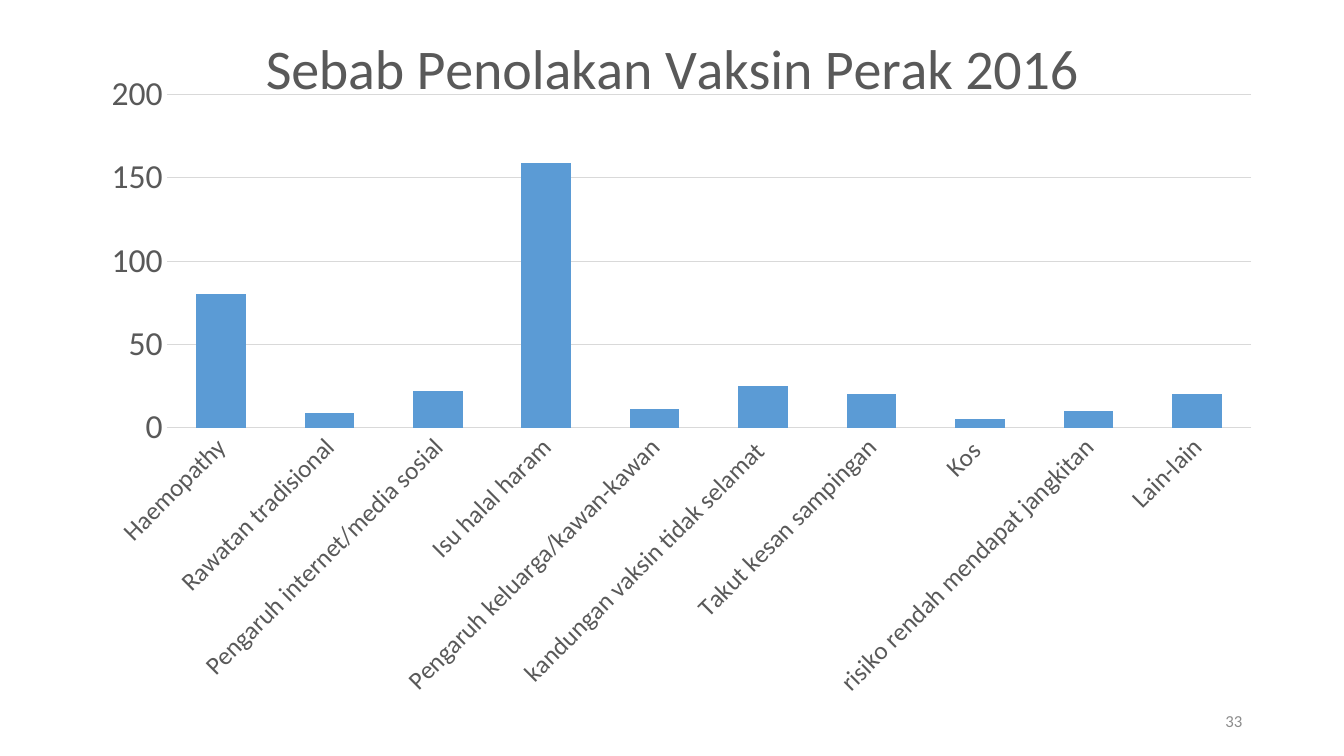
from lxml.etree import SubElement
from pptx import Presentation
from pptx.chart.data import CategoryChartData as ChartData
from pptx.dml.color import RGBColor
from pptx.enum.chart import XL_CHART_TYPE as ChartType, XL_TICK_MARK as TickMark
from pptx.enum.text import MSO_ANCHOR as Anchor, PP_ALIGN as Align
from pptx.oxml import parse_xml
from pptx.oxml.ns import nsdecls, qn
from pptx.util import Inches, Pt

BLUE = RGBColor(0x5B, 0x9B, 0xD5)
GREY = RGBColor(0x59, 0x59, 0x59)
PALE = RGBColor(0xD9, 0xD9, 0xD9)
MUTED = RGBColor(0x8C, 0x8C, 0x8C)

REASONS = {
    "Haemopathy": 80,
    "Rawatan tradisional": 9,
    "Pengaruh internet/media sosial": 22,
    "Isu halal haram": 159,
    "Pengaruh keluarga/kawan-kawan": 11,
    "kandungan vaksin tidak selamat ": 25,
    "Takut kesan sampingan": 20,
    "Kos ": 5,
    "risiko rendah mendapat jangkitan": 10,
    "Lain-lain": 20,
}


def apply(target, formats):
    for name, value in formats.items():
        setattr(target, name, value)


class Slide:
    font_name = "Calibri"

    def __init__(self, deck):
        self.width, self.height = deck.slide_width, deck.slide_height
        self.page = deck.slides.add_slide(deck.slide_layouts[6])

    def area(self, left, top, width, height):
        return (round(left * self.width), round(top * self.height),
                round(width * self.width), round(height * self.height))

    def style(self, font, size, color):
        apply(font, {"name": self.font_name, "size": Pt(size), "bold": False})
        font.color.rgb = color

    def line(self, line_format):
        line_format.color.rgb = PALE
        line_format.width = Pt(0.75)

    def axis(self, axis, size):
        apply(axis, {"major_tick_mark": TickMark.NONE, "minor_tick_mark": TickMark.NONE})
        self.style(axis.tick_labels.font, size, GREY)

    def place_plot(self, chart, **shares):
        plot_area = chart.plots[0]._element.getparent()
        for old in plot_area.findall(qn("c:layout")):
            plot_area.remove(old)
        layout = parse_xml(f"<c:layout {nsdecls('c')}><c:manualLayout/></c:layout>")
        settings = {"layoutTarget": "inner", "xMode": "edge", "yMode": "edge", **shares}
        for name, value in settings.items():
            SubElement(layout[0], qn(f"c:{name}")).set("val", str(value))
        plot_area.insert(0, layout)

    def columns(self, title, values, place):
        data = ChartData()
        data.categories = list(values)
        data.add_series("Series 1", list(values.values()))
        chart = self.page.shapes.add_chart(
            ChartType.COLUMN_CLUSTERED, *self.area(*place), data).chart
        self.style(chart.font, 24, GREY)
        apply(chart, {"has_legend": False, "has_title": True})
        para = chart.chart_title.text_frame.paragraphs[0]
        span = para.add_run()
        span.text = title
        self.style(span.font, 40, GREY)

        plot = chart.plots[0]
        apply(plot, {"gap_width": 119, "overlap": -27, "vary_by_categories": False})
        fill = plot.series[0].format.fill
        fill.solid()
        fill.fore_color.rgb = BLUE

        reasons, counts = chart.category_axis, chart.value_axis
        self.axis(reasons, 18)
        self.line(reasons.format.line)
        reasons._element.find(qn("c:txPr")).find(qn("a:bodyPr")).set("rot", "-2700000")
        self.axis(counts, 24)
        apply(counts, {"minimum_scale": 0, "maximum_scale": 200, "major_unit": 50,
                       "has_major_gridlines": True})
        counts.format.line.fill.background()
        self.line(counts.major_gridlines.format.line)
        self.place_plot(chart, x=0.124, y=0.125, w=0.807, h=0.441)

    def number(self, text, place):
        frame = self.page.shapes.add_textbox(*self.area(*place)).text_frame
        apply(frame, {"word_wrap": True, "vertical_anchor": Anchor.MIDDLE})
        para = frame.paragraphs[0]
        para.alignment = Align.RIGHT
        span = para.add_run()
        span.text = text
        self.style(span.font, 12, MUTED)


def main():
    deck = Presentation()
    apply(deck, {"slide_width": Inches(13.33), "slide_height": Inches(7.5)})
    slide = Slide(deck)
    slide.columns("Sebab Penolakan Vaksin Perak 2016", REASONS, (0, 0, 1, 1))
    slide.number("33", (0.7067, 0.9267, 0.225, 0.0533))
    deck.save("out.pptx")


if __name__ == "__main__":
    main()
